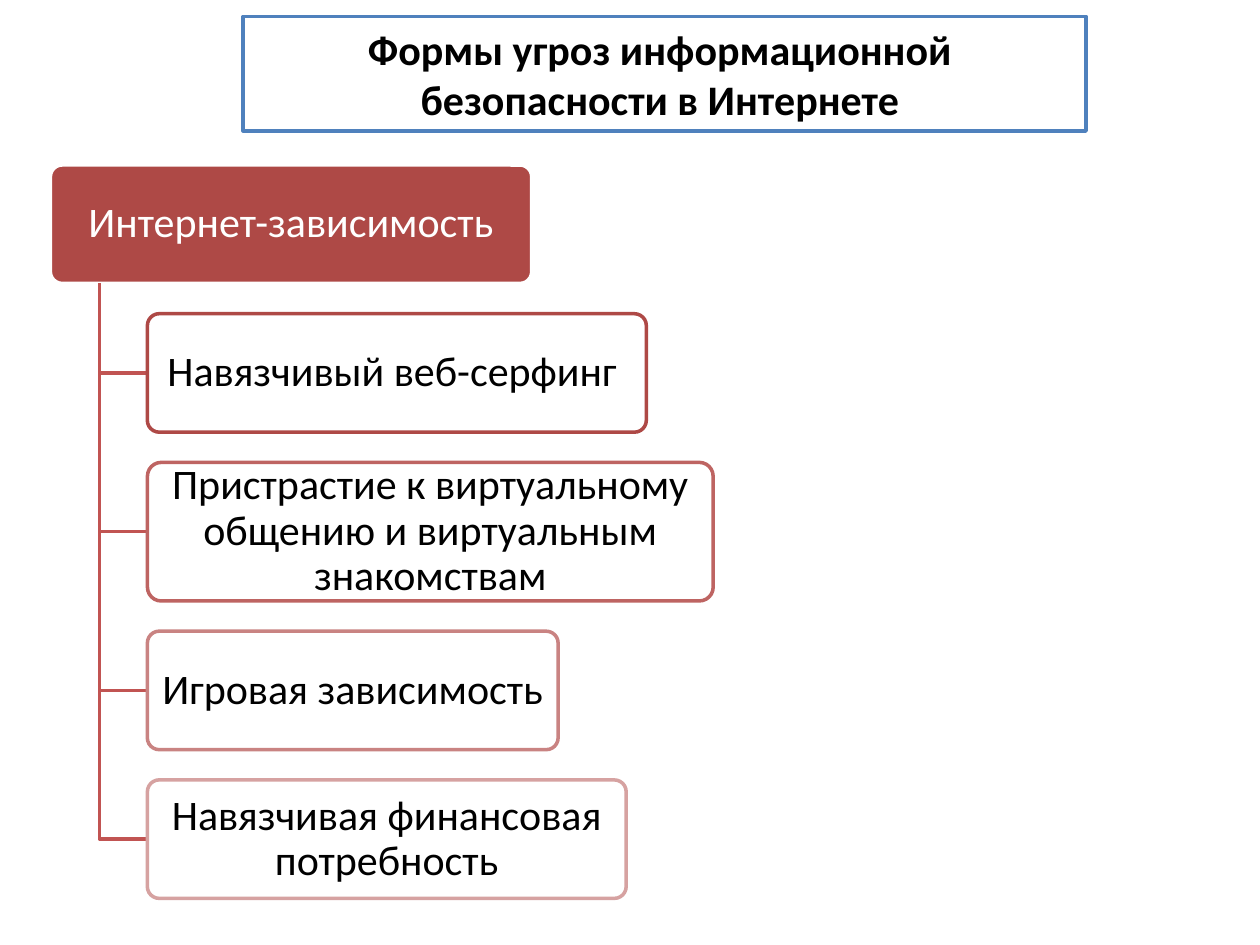
from pptx import Presentation
from pptx.dml.color import RGBColor
from pptx.enum.shapes import MSO_SHAPE as SHAPE
from pptx.enum.text import MSO_ANCHOR as ANCHOR, PP_ALIGN as ALIGN
from pptx.util import Inches, Pt

WHITE = RGBColor(0xFF, 0xFF, 0xFF)
BLACK = RGBColor(0x00, 0x00, 0x00)
BLUE = RGBColor(0x4F, 0x81, 0xBD)
RED = RGBColor(0xAE, 0x49, 0x46)
ELBOW_RED = RGBColor(0xC1, 0x54, 0x52)
ROSE = RGBColor(0xBE, 0x64, 0x62)
PINK = RGBColor(0xC9, 0x83, 0x82)
PALE_PINK = RGBColor(0xD6, 0xA2, 0xA1)


def style(sp, line):
    sp.shadow.inherit = False
    sp.line.color.rgb = line
    sp.line.width = Pt(2)


def add_box(kind, left, top, width, height, lines, fill, line, color):
    sp = s.shapes.add_shape(kind, Inches(left), Inches(top), Inches(width), Inches(height))
    style(sp, line)
    sp.fill.solid()
    sp.fill.fore_color.rgb = fill
    tf = sp.text_frame
    tf.word_wrap = True
    tf.vertical_anchor = ANCHOR.MIDDLE
    tf.text = "\n".join(lines)
    for p in tf.paragraphs:
        p.alignment = ALIGN.CENTER
        p.font.name = "Calibri"
        p.font.size = Pt(24)
        p.font.color.rgb = color
    if kind == SHAPE.ROUNDED_RECTANGLE:
        sp.adjustments[0] = 0.1
        tf.margin_left = tf.margin_right = Inches(0.08)
        tf.margin_top = tf.margin_bottom = Inches(0.06)
        tf.paragraphs[0].line_spacing = 0.9
    return sp


prs = Presentation()
prs.slide_width, prs.slide_height = Inches(10), Inches(7.5)
s = prs.slides.add_slide(prs.slide_layouts[6])

title = add_box(SHAPE.RECTANGLE, 1.93, 0.13, 6.69, 0.91,
                ["Формы угроз информационной ", "безопасности в Интернете "],
                WHITE, BLUE, BLACK)
for p in title.text_frame.paragraphs:
    p.font.bold = True

add_box(SHAPE.ROUNDED_RECTANGLE, 0.4, 1.31, 3.82, 0.94,
        ["Интернет-зависимость"], RED, WHITE, WHITE)

# Children hang from a trunk below the root box, with equal gaps between them
TRUNK_X, TRUNK_TOP, CHILD_X, GAP = 0.79, 2.25, 1.17, 0.24
children = [
    ("Навязчивый веб-серфинг ", 3.96, 0.94, RED),
    ("Пристрастие к виртуальному общению и виртуальным знакомствам", 4.49, 1.1, ROSE),
    ("Игровая зависимость", 3.26, 0.94, PINK),
    ("Навязчивая финансовая потребность", 3.8, 0.94, PALE_PINK),
]
top = TRUNK_TOP + GAP
for text, width, height, line in children:
    middle = Inches(top + height / 2)
    fb = s.shapes.build_freeform(Inches(TRUNK_X), Inches(TRUNK_TOP))
    fb.add_line_segments([(Inches(TRUNK_X), middle), (Inches(CHILD_X), middle)], close=False)
    elbow = fb.convert_to_shape()
    style(elbow, ELBOW_RED)
    elbow.fill.background()
    add_box(SHAPE.ROUNDED_RECTANGLE, CHILD_X, top, width, height, [text], WHITE, line, BLACK)
    top += height + GAP

prs.save("out.pptx")
